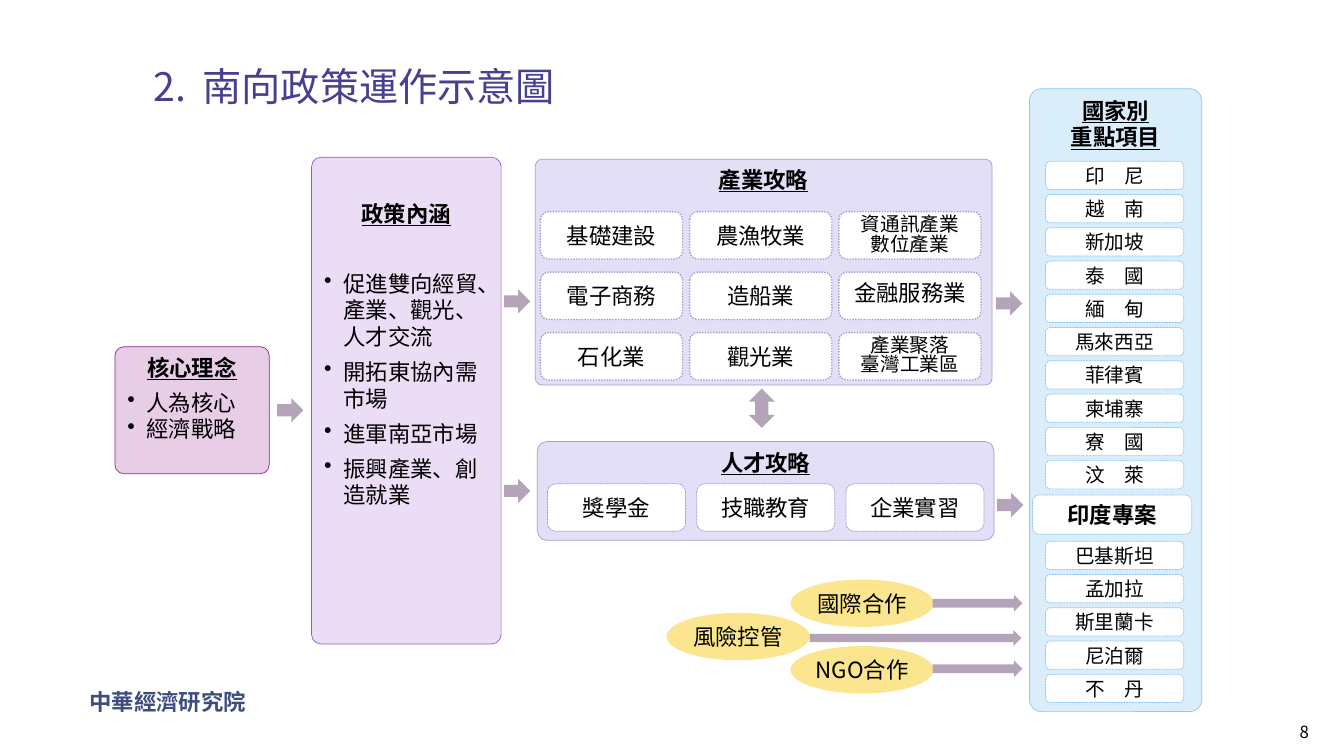
from pptx import Presentation
from pptx.dml.color import RGBColor
from pptx.enum import dml, shapes, text
from pptx.oxml import ns, xmlchemy
from pptx.util import Inches, Pt

FONT = "Noto Sans CJK SC"
COLORS = {
    "ink": "000000", "white": "FFFFFF", "title": "474091", "institute": "3D4D7F",
    "core": "E8CDE7", "core_line": "92278F",
    "policy": "EBDDF6", "policy_line": "9B57D3",
    "strategy": "E3DFF7", "strategy_line": "A39ED4",
    "country": "DAEDFB", "country_line": "8FC9F4",
    "arrow": "B5A3B9", "oval": "FBE68F",
}
SHAPE = shapes.MSO_SHAPE
DASH = dml.MSO_LINE.SQUARE_DOT
DOT = dml.MSO_LINE.ROUND_DOT
CENTER = text.PP_ALIGN.CENTER
LEFT = text.PP_ALIGN.LEFT

SOUTHEAST = ["印　尼", "越　南", "新加坡", "泰　國", "緬　甸",
             "馬來西亞", "菲律賓", "柬埔寨", "寮　國", "汶　萊"]
SOUTH_ASIA = ["巴基斯坦", "孟加拉", "斯里蘭卡", "尼泊爾", "不　丹"]
INDUSTRIES = [["基礎建設", "農漁牧業", "資通訊產業\n數位產業"],
              ["電子商務", "造船業", "金融服務業"],
              ["石化業", "觀光業", "產業聚落\n臺灣工業區"]]
TALENT = ["獎學金", "技職教育", "企業實習"]
ARROWS = [(2.75, 3.95, 0.26, 0.24), (5, 2.87, 0.26, 0.24), (5, 4.75, 0.26, 0.24),
          (9.88, 2.89, 0.26, 0.24), (9.89, 4.89, 0.26, 0.24),
          (9.25, 5.9, 0.89, 0.17), (8.03, 6.25, 2.1, 0.16), (9.25, 6.55, 0.89, 0.17)]
OVALS = [("國際合作", 7.84, 5.75), ("風險控管", 6.61, 6.08), ("NGO合作", 7.84, 6.41)]


def rgb(name):
    return RGBColor.from_string(COLORS[name])


def style(para, size, color="ink", bold=False, underline=False, align=CENTER, spacing=None):
    para.alignment = align
    if spacing:
        para.line_spacing = Pt(spacing)
    for span in para.runs:
        font = span.font
        font.name, font.size, font.bold, font.underline = FONT, Pt(size), bold, underline
        font.color.rgb = rgb(color)
        east_asian = xmlchemy.OxmlElement("a:ea")
        east_asian.set("typeface", FONT)
        span._r.get_or_add_rPr().find(ns.qn("a:latin")).addnext(east_asian)


def add_marker(para, tag, margin, hanging, **attributes):
    """Give a paragraph a bullet or number with a hanging indent."""
    properties = para._p.get_or_add_pPr()
    properties.set("marL", str(Inches(margin)))
    properties.set("indent", str(-Inches(hanging)))
    marker = xmlchemy.OxmlElement(tag)
    for key, value in attributes.items():
        marker.set(key, value)
    properties.append(marker)


def add_block(page, kind, at, fill, line=None, width=0.5, dash=None, adjust=None):
    block = page.shapes.add_shape(kind, *map(Inches, at))
    block.shadow.inherit = False
    block.fill.solid()
    block.fill.fore_color.rgb = rgb(fill)
    if line:
        block.line.color.rgb = rgb(line)
        block.line.width = Pt(width)
        block.line.dash_style = dash
    else:
        block.line.fill.background()
    if adjust:
        block.adjustments[0] = adjust
    return block


def add_label(block, words, size=16, bold=False, spacing=None):
    frame = block.text_frame
    frame.word_wrap = False
    frame.vertical_anchor = text.MSO_ANCHOR.MIDDLE
    frame.margin_left = frame.margin_right = Inches(0.04)
    frame.margin_top = frame.margin_bottom = Inches(0.04)
    frame.text = words
    for para in frame.paragraphs:
        style(para, size, bold=bold, spacing=spacing)


def add_panel(page, at, color, adjust, heading, bullets=(), top=0.05, after=6, gap=0):
    """Add a rounded panel with an underlined heading and optional bullets."""
    block = add_block(page, SHAPE.ROUNDED_RECTANGLE, at, color, color + "_line", adjust=adjust)
    frame = block.text_frame
    frame.word_wrap = True
    frame.vertical_anchor = text.MSO_ANCHOR.TOP
    frame.margin_top = Inches(top)
    frame.text = heading
    style(frame.paragraphs[0], 16, bold=True, underline=True, spacing=19)
    frame.paragraphs[0].space_after = Pt(after)
    for words in bullets:
        para = frame.add_paragraph()
        para.text = words
        para.space_before = para.space_after = Pt(gap)
        style(para, 16, align=LEFT, spacing=19)
        add_marker(para, "a:buChar", 0.19, 0.19, char="•")


def add_caption(page, at, words, size, color, bold, align):
    box = page.shapes.add_textbox(*map(Inches, at))
    frame = box.text_frame
    frame.word_wrap = True
    frame.vertical_anchor = text.MSO_ANCHOR.MIDDLE
    frame.text = words
    style(frame.paragraphs[0], size, color, bold, align=align)


def add_title(page, words):
    title = page.shapes.title
    title.left, title.top, title.width, title.height = map(Inches, (0.92, 0.48, 9, 0.75))
    frame = title.text_frame
    frame.text = words
    frame.word_wrap = True
    frame.auto_size = text.MSO_AUTO_SIZE.NONE
    frame.vertical_anchor = text.MSO_ANCHOR.TOP
    para = frame.paragraphs[0]
    style(para, 28, "title", align=LEFT, spacing=40)
    add_marker(para, "a:buAutoNum", 0.99, 0.49, type="arabicPeriod", startAt="2")


def add_countries(page):
    add_panel(page, (10.21, 0.88, 1.71, 6.18), "country", 0.07, "國家別\v重點項目")
    for top, names in ((1.6, SOUTHEAST), (5.37, SOUTH_ASIA)):
        for row, name in enumerate(names):
            block = add_block(page, SHAPE.ROUNDED_RECTANGLE, (10.37, top + 0.33 * row, 1.37, 0.28),
                              "white", "country_line", dash=DASH)
            add_label(block, name, 14)
    india = add_block(page, SHAPE.ROUNDED_RECTANGLE, (10.24, 4.91, 1.58, 0.39),
                      "white", "country_line", dash=DASH)
    add_label(india, "印度專案", bold=True)


def add_strategies(page):
    add_panel(page, (5.31, 1.58, 4.53, 2.24), "strategy", 0.03, "產業攻略")
    for row, names in enumerate(INDUSTRIES):
        for column, name in enumerate(names):
            at = (5.36 + 1.48 * column, 2.1 + 0.6 * row, 1.41, 0.47)
            block = add_block(page, SHAPE.ROUNDED_RECTANGLE, at, "white", "strategy_line", 1, DOT)
            add_label(block, name, 14 if "\n" in name else 16,
                      spacing=14 if column == 2 else None)
    add_panel(page, (5.33, 4.38, 4.53, 0.98), "strategy", 0.1, "人才攻略")
    for column, name in enumerate(TALENT):
        block = add_block(page, SHAPE.ROUNDED_RECTANGLE, (5.43 + 1.48 * column, 4.8, 1.37, 0.47),
                          "white", "strategy_line", dash=DASH)
        add_label(block, name)


def main():
    deck = Presentation()
    deck.slide_width, deck.slide_height = Inches(13.33), Inches(7.5)
    page = deck.slides.add_slide(deck.slide_layouts.get_by_name("Title Only"))
    add_title(page, "南向政策運作示意圖")
    add_countries(page)
    add_panel(page, (1.14, 3.44, 1.53, 1.26), "core", 0.07, "核心理念", ["人為核心", "經濟戰略"])
    add_panel(page, (3.09, 1.56, 1.88, 4.83), "policy", 0.05, "政策內涵",
              ["促進雙向經貿、產業、觀光、人才交流", "開拓東協內需市場", "進軍南亞市場", "振興產業、創造就業"],
              top=0.4, after=28, gap=3)
    add_strategies(page)
    for name, left, top in OVALS:
        add_label(add_block(page, SHAPE.OVAL, (left, top, 1.42, 0.47), "oval"), name)
    for at in ARROWS:
        add_block(page, SHAPE.RIGHT_ARROW, at, "arrow")
    exchange = add_block(page, SHAPE.LEFT_RIGHT_ARROW, (7.36, 3.92, 0.39, 0.26), "arrow")
    exchange.rotation = 90
    add_caption(page, (0.79, 6.77, 1.81, 0.37), "中華經濟研究院", 16, "institute", True, LEFT)
    add_caption(page, (10.87, 7.05, 2.21, 0.41), "8", 12, "ink", False, text.PP_ALIGN.RIGHT)
    deck.save("out.pptx")


if __name__ == "__main__":
    main()
